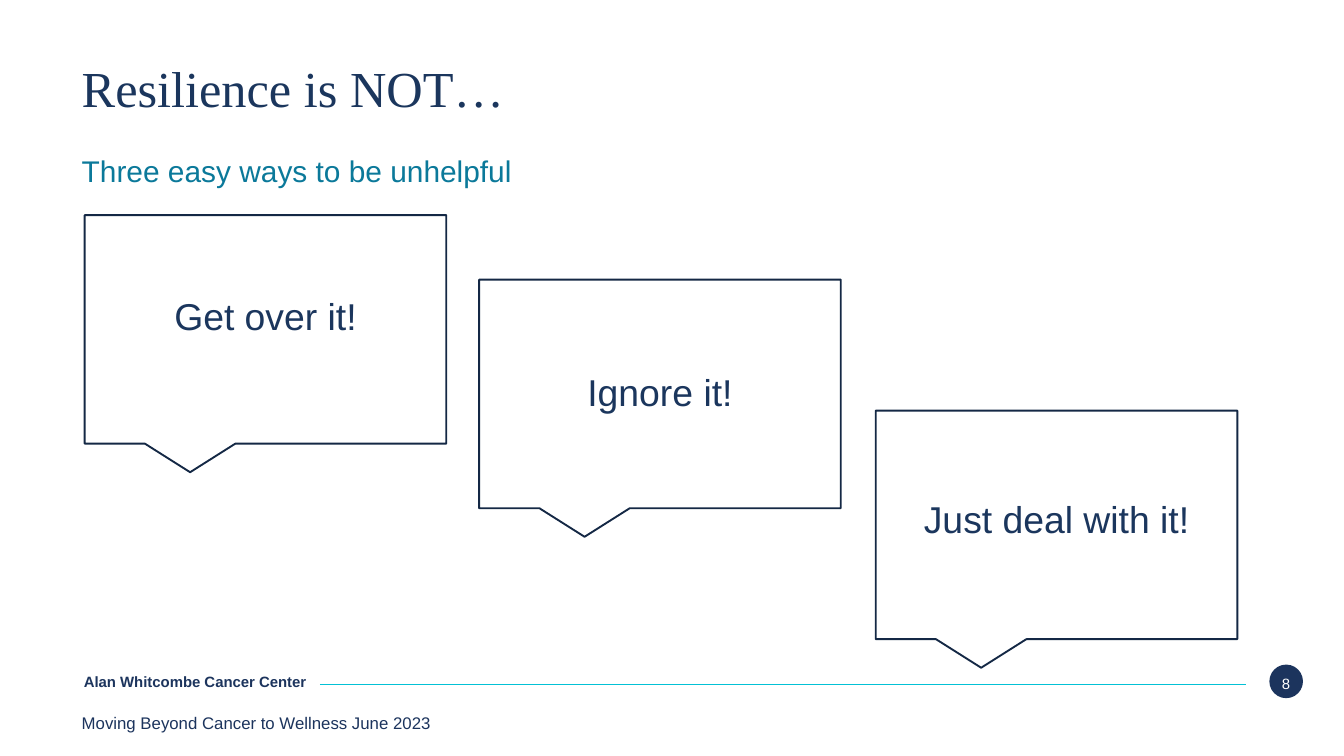
from dataclasses import dataclass

from lxml.etree import SubElement
from pptx import Presentation
from pptx.dml.color import RGBColor as Rgb
from pptx.enum.shapes import MSO_CONNECTOR as Connector, MSO_SHAPE as Shape
from pptx.enum.text import MSO_ANCHOR as Anchor, PP_ALIGN as Align
from pptx.oxml.ns import qn
from pptx.util import Cm, Pt


@dataclass(frozen=True)
class Theme:
    navy: Rgb = Rgb(0x1B, 0x36, 0x5D)
    footer_navy: Rgb = Rgb(0x1C, 0x34, 0x5D)
    outline: Rgb = Rgb(0x14, 0x28, 0x45)
    teal: Rgb = Rgb(0x0B, 0x79, 0x9A)
    cyan: Rgb = Rgb(0x03, 0xC1, 0xD5)
    white: Rgb = Rgb(0xFF, 0xFF, 0xFF)
    serif: str = "Times New Roman"
    sans: str = "Arial"
    title: int = 54
    subtitle: int = 32
    bubble: int = 40
    footer: int = 18
    label: int = 16


THEME = Theme()
LEFT = 2.84
CONTENT_WIDTH = 44.22
BUBBLE_WIDTH, BUBBLE_HEIGHT = 13.67, 8.64

# Caption, bubble left, bubble top, caption top (cm)
BUBBLES = [
    ("Get over it!", 3.2, 8.13, 10.97),
    ("Ignore it!", 18.11, 10.57, 13.84),
    ("Just deal with it!", 33.1, 15.52, 18.64),
]


def add_text(page, text, left, top, width, height, *, size, color=THEME.navy,
             font=THEME.sans, bold=False, align=Align.LEFT, anchor=Anchor.TOP,
             line_spacing=None, inset=True):
    box = page.shapes.add_textbox(Cm(left), Cm(top), Cm(width), Cm(height))
    frame = box.text_frame
    frame.word_wrap = True
    frame.vertical_anchor = anchor
    if not inset:
        frame.margin_left = frame.margin_right = 0
        frame.margin_top = frame.margin_bottom = 0
    para = frame.paragraphs[0]
    para.alignment = align
    para.line_spacing = line_spacing
    span = para.add_run()
    span.text = text
    span.font.name = font
    span.font.size = Pt(size)
    span.font.bold = bold
    span.font.color.rgb = color


def add_bubble(page, caption, left, top, caption_top):
    bubble = page.shapes.add_shape(Shape.RECTANGULAR_CALLOUT, Cm(left), Cm(top),
                                   Cm(BUBBLE_WIDTH), Cm(BUBBLE_HEIGHT))
    bubble.shadow.inherit = False
    bubble.fill.background()
    bubble.line.color.rgb = THEME.outline
    bubble.line.width = Pt(2)
    add_text(page, caption, left, caption_top, BUBBLE_WIDTH, 1.96,
             size=THEME.bubble, align=Align.CENTER)


def add_rule(page, start, end, y):
    rule = page.shapes.add_connector(Connector.STRAIGHT, Cm(start), Cm(y), Cm(end), Cm(y))
    rule.line.color.rgb = THEME.cyan
    rule.line.width = Pt(1)
    SubElement(rule.element.spPr, qn("a:effectLst"))


def add_page_number(page, number):
    badge = page.shapes.add_shape(Shape.OVAL, Cm(47.98), Cm(25.12), Cm(1.27), Cm(1.27))
    badge.shadow.inherit = False
    badge.fill.solid()
    badge.fill.fore_color.rgb = THEME.footer_navy
    badge.line.fill.background()
    add_text(page, number, 48.18, 25.2, 0.86, 0.89, size=THEME.label, color=THEME.white,
             align=Align.CENTER, line_spacing=Pt(28), inset=False)


def main():
    deck = Presentation()
    deck.slide_width, deck.slide_height = Cm(50.8), Cm(28.575)
    page = deck.slides.add_slide(deck.slide_layouts[6])

    # Footer band
    add_page_number(page, "8")
    add_rule(page, 12.09, 47.09, 25.86)
    add_text(page, "Alan Whitcombe Cancer Center", 2.92, 25.3, 9.5, 1.24,
             size=THEME.label, color=THEME.footer_navy, bold=True)
    add_text(page, "Moving Beyond Cancer to Wellness June 2023", LEFT, 26.82,
             CONTENT_WIDTH, 1.52, size=THEME.footer, color=THEME.footer_navy)

    # Headings
    add_text(page, "Resilience is NOT…", LEFT, 1.96, CONTENT_WIDTH, 2.72,
             size=THEME.title, font=THEME.serif, anchor=Anchor.MIDDLE)
    add_text(page, "Three easy ways to be unhelpful", LEFT, 5.66, 26.31, 2.46,
             size=THEME.subtitle, color=THEME.teal)

    # Speech bubbles
    for bubble in BUBBLES:
        add_bubble(page, *bubble)

    deck.save("out.pptx")


if __name__ == "__main__":
    main()
